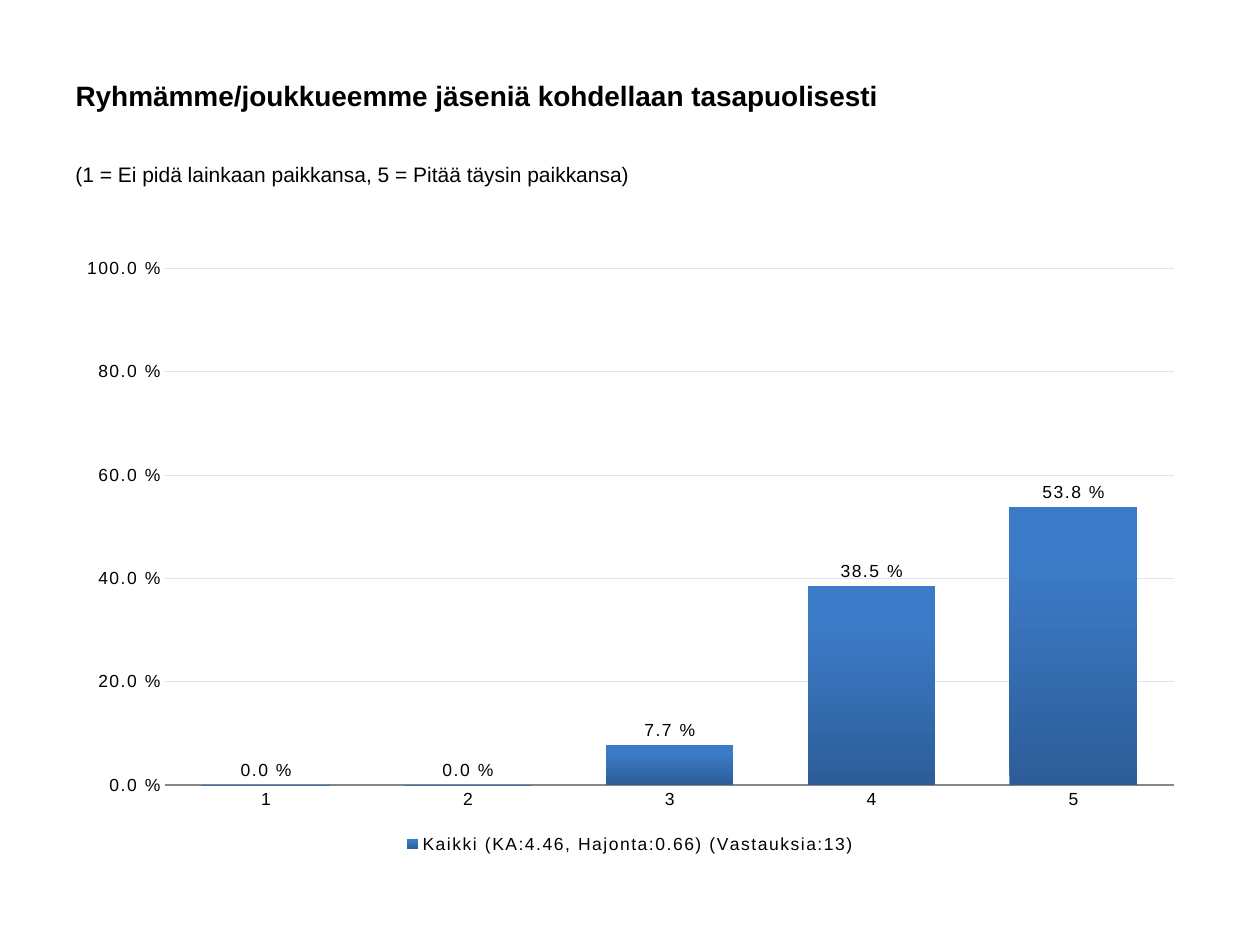
from lxml.etree import SubElement
from pptx import Presentation
from pptx.chart.data import CategoryChartData
from pptx.dml.color import RGBColor
from pptx.enum.chart import XL_CHART_TYPE, XL_LABEL_POSITION, XL_LEGEND_POSITION, XL_TICK_MARK
from pptx.enum.text import MSO_ANCHOR, PP_ALIGN
from pptx.oxml.ns import qn
from pptx.util import Pt

EMU_PER_PX = 914400 / 126
COLORS = {
    "text": "000000",
    "bar_bottom": "2C5D98",
    "bar_top": "3C7BC7",
    "grid": "DCE6F2",
    "axis": "868686",
}
FONT = "Arial"
PERCENT = "0.0\\ %"
LEFT, WIDTH = 63, 1134


def px(value):
    return round(value * EMU_PER_PX)


def color(name):
    return RGBColor.from_string(COLORS[name])


def format_font(font, size, bold=False):
    font.name = FONT
    font.size = Pt(size)
    font.bold = bold
    font.color.rgb = color("text")


def write_text(shape, text, size, anchor, bold=False, space_before=0):
    frame = shape.text_frame
    frame.word_wrap = True
    frame.vertical_anchor = anchor
    paragraph = frame.paragraphs[0]
    paragraph.alignment = PP_ALIGN.LEFT
    paragraph.space_before = Pt(space_before)
    run = paragraph.add_run()
    run.text = text
    format_font(run.font, size, bold)


def add_title(slide, text):
    title = slide.shapes.title
    title.left, title.top, title.width, title.height = px(LEFT), px(45), px(WIDTH), px(100)
    write_text(title, text, 16, MSO_ANCHOR.MIDDLE, bold=True)


def add_scale_note(slide, text):
    note = slide.shapes.add_textbox(px(LEFT), px(155), px(WIDTH), px(74))
    write_text(note, text, 12, MSO_ANCHOR.TOP, space_before=2.4)


def format_axes(chart):
    category_axis, value_axis = chart.category_axis, chart.value_axis
    for axis in (category_axis, value_axis):
        axis.major_tick_mark = axis.minor_tick_mark = XL_TICK_MARK.NONE
        format_font(axis.tick_labels.font, 10)
    category_axis.format.line.color.rgb = color("axis")
    value_axis.format.line.fill.background()
    value_axis.minimum_scale, value_axis.maximum_scale = 0, 1
    value_axis.major_unit = 0.2
    value_axis.tick_labels.number_format = PERCENT
    value_axis.tick_labels.number_format_is_linked = False
    grid_line = value_axis.major_gridlines.format.line
    grid_line.color.rgb = color("grid")
    grid_line.width = Pt(0.75)


def format_bars(plot):
    plot.gap_width = 58
    plot.vary_by_categories = False
    series = plot.series[0]
    fill = series.format.fill
    fill.gradient()
    fill.gradient_angle = 90
    for stop, name, position in zip(fill.gradient_stops, ("bar_bottom", "bar_top"), (0, 0.8)):
        stop.color.rgb = color(name)
        stop.position = position
    labels = series.data_labels
    labels.show_value = True
    labels.number_format = PERCENT
    labels.number_format_is_linked = False
    labels.position = XL_LABEL_POSITION.OUTSIDE_END
    format_font(labels.font, 10)


def place_plot(chart, **fractions):
    plot_area = chart.element.find(".//" + qn("c:plotArea"))
    layout = plot_area.find(qn("c:layout"))
    if layout is None:
        layout = SubElement(plot_area, qn("c:layout"))
        plot_area.insert(0, layout)
    manual = SubElement(layout, qn("c:manualLayout"))
    settings = {"layoutTarget": "inner", "xMode": "edge", "yMode": "edge", **fractions}
    for tag, value in settings.items():
        SubElement(manual, qn(f"c:{tag}")).set("val", str(value))


def space_letters(chart):
    for properties in chart.element.iter(qn("a:defRPr")):
        properties.set("spc", "100")


def add_answer_chart(slide, name, categories, values):
    data = CategoryChartData(number_format=PERCENT)
    data.categories = categories
    data.add_series(name, values)
    chart = slide.shapes.add_chart(
        XL_CHART_TYPE.COLUMN_CLUSTERED, px(LEFT), px(244), px(WIDTH), px(615), data
    ).chart
    chart.has_title = False
    format_font(chart.font, 10)
    chart.has_legend = True
    chart.legend.position = XL_LEGEND_POSITION.BOTTOM
    chart.legend.include_in_layout = False
    format_font(chart.legend.font, 10)
    format_axes(chart)
    format_bars(chart.plots[0])
    place_plot(chart, x=0.09, y=0.04, w=0.89, h=0.84)
    space_letters(chart)


def main():
    presentation = Presentation()
    presentation.slide_width, presentation.slide_height = px(1260), px(945)
    slide = presentation.slides.add_slide(presentation.slide_layouts[5])
    add_title(slide, "Ryhmämme/joukkueemme jäseniä kohdellaan tasapuolisesti")
    add_scale_note(slide, "(1 = Ei pidä lainkaan paikkansa, 5 = Pitää täysin paikkansa)")
    add_answer_chart(
        slide,
        "Kaikki (KA:4.46, Hajonta:0.66) (Vastauksia:13)",
        ["1", "2", "3", "4", "5"],
        [0, 0, 0.077, 0.385, 0.538],
    )
    presentation.save("out.pptx")


if __name__ == "__main__":
    main()
